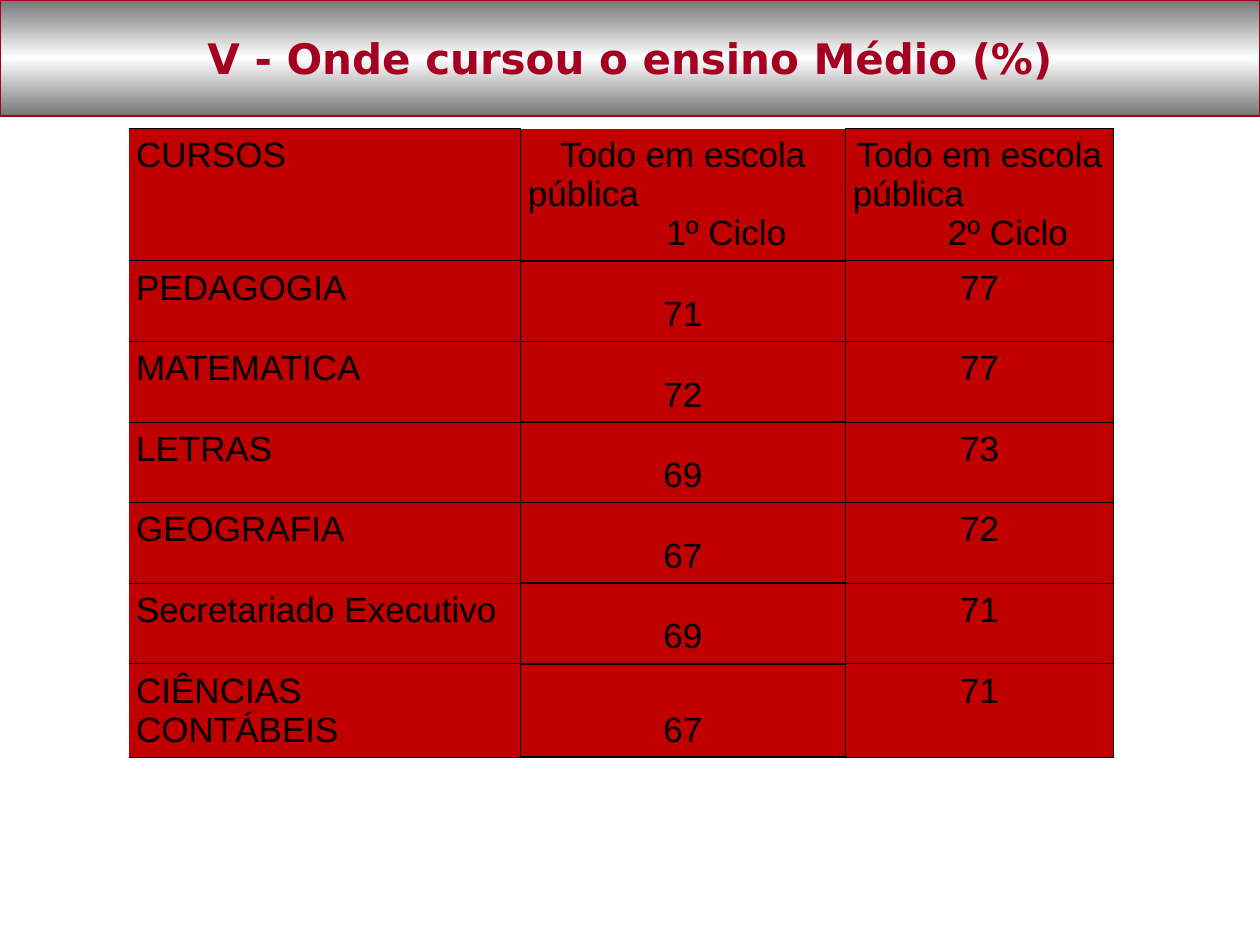
from copy import deepcopy

from lxml import etree
from pptx import Presentation
from pptx.dml.color import RGBColor
from pptx.enum.text import MSO_ANCHOR, PP_ALIGN
from pptx.oxml.ns import qn
from pptx.util import Inches, Pt

LEFT, CENTER = PP_ALIGN.LEFT, PP_ALIGN.CENTER
TOP, MIDDLE, BOTTOM = MSO_ANCHOR.TOP, MSO_ANCHOR.MIDDLE, MSO_ANCHOR.BOTTOM

WINE, RED, BLACK = "A50021", "C00000", "000000"
GRAY, WHITE = "767676", "FFFFFF"

TITLE = "V - Onde cursou o ensino Médio (%)"
ROWS = [
    ("PEDAGOGIA", 71, 77),
    ("MATEMATICA", 72, 77),
    ("LETRAS", 69, 73),
    ("GEOGRAFIA", 67, 72),
    ("Secretariado Executivo", 69, 71),
    ("CIÊNCIAS CONTÁBEIS", 67, 71),
]
WIDTHS = [3.11, 2.58, 2.13]
HEAD, ROW = 0.92, 0.64

# Per column: alignment, anchor, border widths in points
COLS = [
    (LEFT, TOP, {"R": 1, "T": 0.5, "B": 0.5}),
    (CENTER, BOTTOM, {"L": 1, "R": 0.5, "T": 1, "B": 1}),
    (CENTER, TOP, {"L": 0.5, "R": 0.5, "T": 0.5, "B": 0.5}),
]


def color(code):
    return RGBColor.from_string(code)


def set_font(para, name, size, code, bold=False):
    font = para.font
    font.name, font.size, font.bold = name, Pt(size), bold
    font.color.rgb = color(code)


def add_title(slide):
    """Rounded band with a mirrored gradient."""
    band = slide.shapes.title
    band.left, band.top = Inches(0), Inches(0)
    band.width, band.height = Inches(10), Inches(HEAD)
    geom = etree.SubElement(band._element.spPr, qn("a:prstGeom"),
                            prst="flowChartAlternateProcess")
    etree.SubElement(geom, qn("a:avLst"))

    # Add a middle stop to the two default ones
    band.fill.gradient()
    band.fill.gradient_angle = 90
    first = band._element.spPr.find(".//" + qn("a:gs"))
    first.addnext(deepcopy(first))
    shades = [(0, GRAY), (0.5, WHITE), (1, GRAY)]
    for stop, (pos, code) in zip(band.fill.gradient_stops, shades):
        stop.position = pos
        stop.color.rgb = color(code)
    band.line.color.rgb = color(WINE)
    band.line.width = Pt(0.75)

    frame = band.text_frame
    frame.text = TITLE
    frame.word_wrap = False
    frame.vertical_anchor = MIDDLE
    para = frame.paragraphs[0]
    para.alignment = CENTER
    set_font(para, "DejaVu Sans", 24, WINE, True)


def set_edges(cell, edges):
    props = cell._tc.get_or_add_tcPr()
    for side in "LRTB":
        width = edges.get(side, 0)
        line = etree.SubElement(props, qn("a:ln" + side), w=str(Pt(width)))
        if width:
            fill = etree.SubElement(line, qn("a:solidFill"))
            etree.SubElement(fill, qn("a:srgbClr"), val=BLACK)
        else:
            etree.SubElement(line, qn("a:noFill"))


def fill_cell(cell, lines, anchor, edges):
    """Write lines of (text, alignment, left indent)."""
    set_edges(cell, edges)
    cell.fill.solid()
    cell.fill.fore_color.rgb = color(RED)
    cell.vertical_anchor = anchor
    cell.margin_left = cell.margin_right = Inches(0.06)
    cell.margin_top = cell.margin_bottom = Inches(0.06)
    frame = cell.text_frame
    frame.text = "\n".join(text for text, _, _ in lines)
    for para, (_, align, indent) in zip(frame.paragraphs, lines):
        para.alignment = align
        set_font(para, "Arial", 20, BLACK)
        if indent:
            para._p.get_or_add_pPr().set("marL", str(Inches(indent)))


def head_lines(cycle, indent):
    return [("Todo em escola", CENTER, 0), ("pública", LEFT, 0),
            (cycle, CENTER, indent)]


def add_grid(slide):
    count = len(ROWS) + 1
    frame = slide.shapes.add_table(
        count, len(WIDTHS), Inches(1.02), Inches(1.02),
        Inches(sum(WIDTHS)), Inches(HEAD + ROW * len(ROWS)))
    table = frame.table
    table.first_row = table.horz_banding = False
    for col, width in zip(table.columns, WIDTHS):
        col.width = Inches(width)
    for i, row in enumerate(table.rows):
        row.height = Inches(ROW if i else HEAD)

    # Header row, with the cycle names set off to the right
    heads = [[("CURSOS", LEFT, 0)],
             head_lines("1º Ciclo", 0.69), head_lines("2º Ciclo", 0.45)]
    for j, (lines, (_, anchor, edges)) in enumerate(zip(heads, COLS)):
        if j == 1:
            edges = {**edges, "T": 0}
        fill_cell(table.cell(0, j), lines, anchor, edges)

    # Course rows
    for i, values in enumerate(ROWS, 1):
        for j, (value, (align, anchor, edges)) in enumerate(zip(values, COLS)):
            fill_cell(table.cell(i, j), [(str(value), align, 0)], anchor, edges)


def main():
    deck = Presentation()
    deck.slide_width, deck.slide_height = Inches(10), Inches(7.5)
    slide = deck.slides.add_slide(deck.slide_layouts[5])
    add_title(slide)
    add_grid(slide)
    deck.save("out.pptx")


if __name__ == "__main__":
    main()
